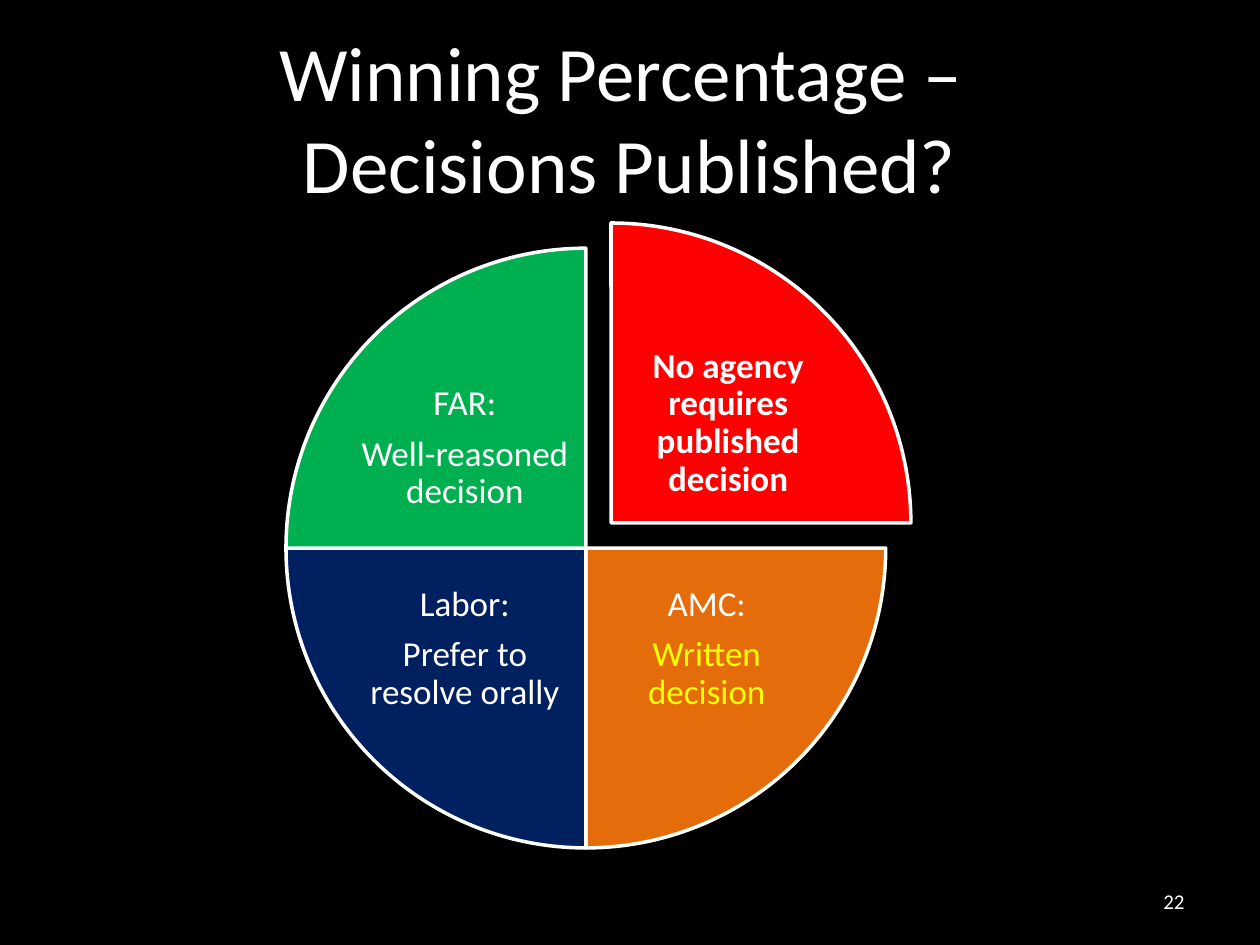
from dataclasses import dataclass

from pptx import Presentation
from pptx import util as u
from pptx.dml.color import RGBColor
from pptx.enum import shapes, text

WIDTH, HEIGHT = 10, 7.5
FONT = "Calibri"
WHITE, YELLOW = "FFFFFF", "FFFF00"
DIAMETER = 4.76
PIE_LEFT, PIE_TOP = 2.27, 1.97
PULL = 0.2  # how far the highlighted quarter is drawn out
QUARTER = 54  # 90 degrees in adjustment units
FULL_TURN = 4 * QUARTER
LABEL_W, LABEL_H = 1.76, 1.42
LEFT_COL, RIGHT_COL = 2.81, 4.73
UPPER_ROW, LOWER_ROW = 2.85, 4.44


@dataclass
class Line:
    words: str
    color: str = WHITE


@dataclass
class Quarter:
    start: int  # quarter turns clockwise from three o'clock
    fill: str
    label_at: tuple[float, float]
    lines: list[Line]
    pulled: bool = False


QUARTERS = [
    Quarter(3, "FF0000", (RIGHT_COL - 0.03, UPPER_ROW),
            [Line("No agency requires published decision")], pulled=True),
    Quarter(0, "E46C0A", (RIGHT_COL, LOWER_ROW),
            [Line("AMC:"), Line("Written decision", YELLOW)]),
    Quarter(1, "002060", (LEFT_COL, LOWER_ROW),
            [Line("Labor:"), Line("Prefer to resolve orally")]),
    Quarter(2, "00B050", (LEFT_COL, UPPER_ROW),
            [Line("FAR:"), Line("Well-reasoned decision")]),
]


def rgb(color: str) -> RGBColor:
    return RGBColor.from_string(color)


def box(x: float, y: float, w: float, h: float) -> list[int]:
    return [u.Inches(v) for v in (x, y, w, h)]


def add_text(s, at: list[int], lines: list[Line], size: float,
             align=text.PP_ALIGN.CENTER, bold: bool = False,
             inset: float | None = None, spacing: float = 1, after: float = 0) -> None:
    """Add a middle-anchored text box; a newline in a line becomes a line break."""
    tf = s.shapes.add_textbox(*at).text_frame
    tf.word_wrap = True
    tf.auto_size = text.MSO_AUTO_SIZE.NONE
    tf.vertical_anchor = text.MSO_ANCHOR.MIDDLE
    if inset is not None:
        tf.margin_left = tf.margin_right = u.Inches(inset)
        tf.margin_top = tf.margin_bottom = u.Inches(inset)
    for i, line in enumerate(lines):
        p = tf.add_paragraph() if i else tf.paragraphs[0]
        p.alignment = align
        p.line_spacing = spacing
        p.space_after = u.Pt(after)
        for j, words in enumerate(line.words.split("\n")):
            if j:
                p.add_line_break()
            r = p.add_run()
            r.text = words
            r.font.name, r.font.size, r.font.bold = FONT, u.Pt(size), bold
            r.font.color.rgb = rgb(line.color)


def add_quarter(s, q: Quarter) -> None:
    shift = PULL if q.pulled else 0
    sp = s.shapes.add_shape(
        shapes.MSO_SHAPE.PIE,
        *box(PIE_LEFT + shift, PIE_TOP - shift, DIAMETER, DIAMETER))
    sp.adjustments[0] = q.start * QUARTER
    sp.adjustments[1] = (q.start + 1) * QUARTER % FULL_TURN
    sp.shadow.inherit = False
    sp.fill.solid()
    sp.fill.fore_color.rgb = rgb(q.fill)
    sp.line.color.rgb = rgb(WHITE)
    sp.line.width = u.Pt(2)
    x, y = q.label_at
    add_text(s, box(x + shift, y - shift, LABEL_W, LABEL_H), q.lines, 20,
             bold=q.pulled, inset=0.03, spacing=0.9, after=7)


def main() -> None:
    prs = Presentation()
    prs.slide_width, prs.slide_height = u.Inches(WIDTH), u.Inches(HEIGHT)
    s = prs.slides.add_slide(prs.slide_layouts[6])
    s.background.fill.solid()
    s.background.fill.fore_color.rgb = rgb("000000")

    margin = WIDTH * 0.05
    add_text(s, box(margin, HEIGHT * 0.04, WIDTH - 2 * margin, HEIGHT / 6),
             [Line("Winning Percentage – \nDecisions Published?")], 44)
    for q in QUARTERS:
        add_quarter(s, q)
    number_w = 2.33
    add_text(s, box(WIDTH - margin - number_w, 6.95, number_w, 0.4),
             [Line("22")], 12, align=text.PP_ALIGN.RIGHT)
    prs.save("out.pptx")


if __name__ == "__main__":
    main()
